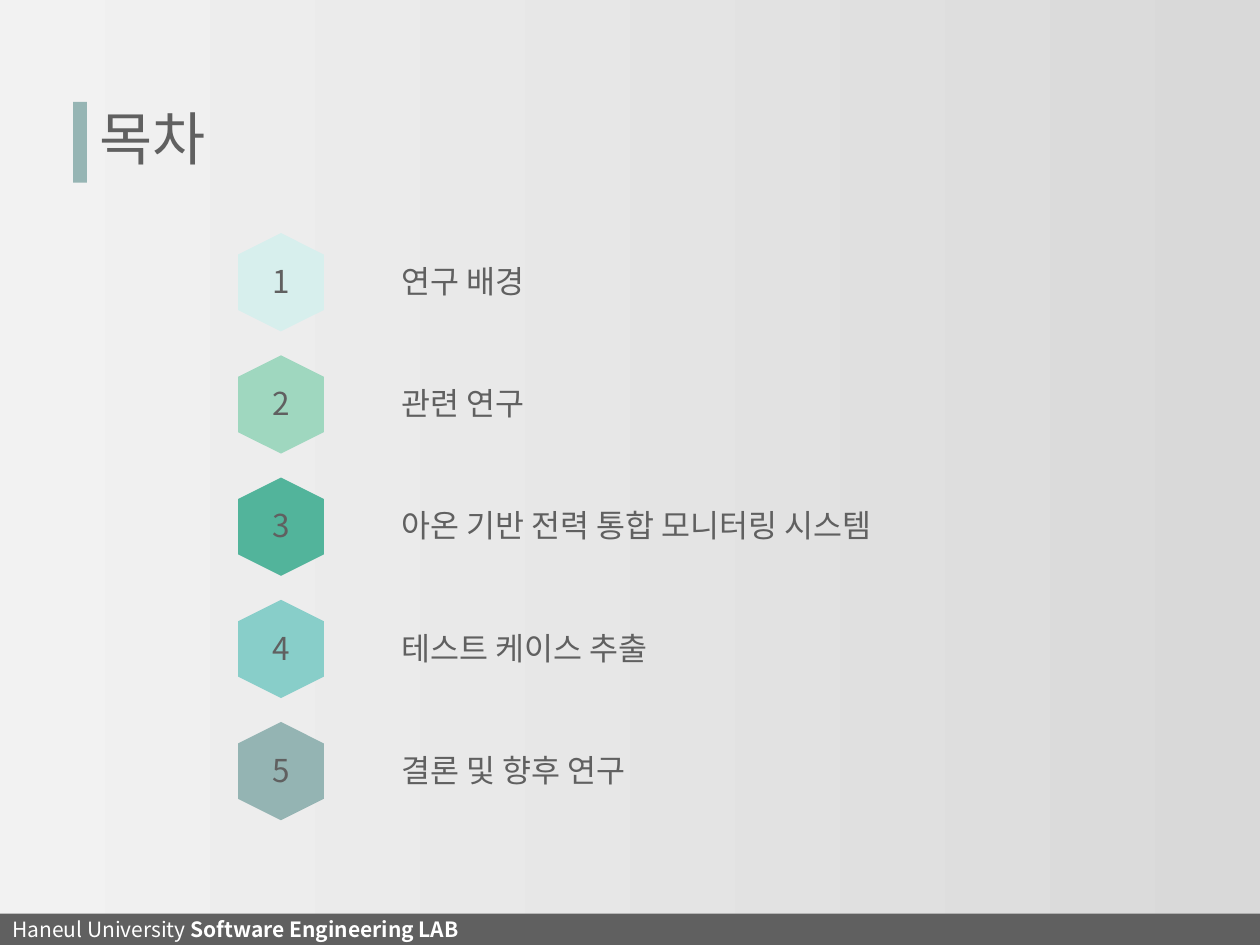
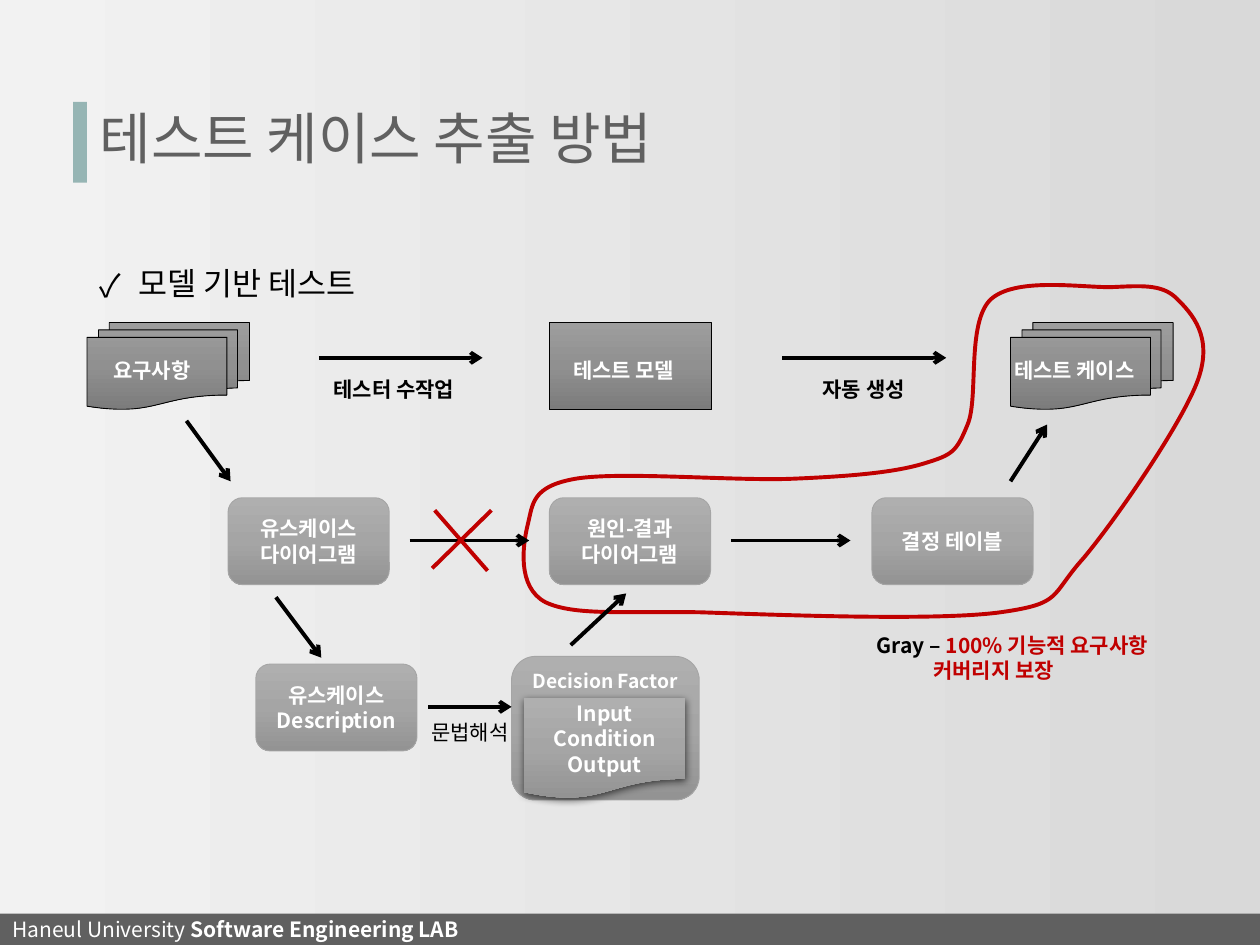
import copy

import pptx
import pptx.dml.color
import pptx.enum.shapes
import pptx.enum.text
import pptx.oxml
import pptx.oxml.ns
import pptx.util
from pptx.util import Inches

SHAPE = pptx.enum.shapes.MSO_SHAPE
ALIGN = pptx.enum.text.PP_ALIGN
ANCHOR = pptx.enum.text.MSO_ANCHOR
AUTO_SIZE = pptx.enum.text.MSO_AUTO_SIZE
qn = pptx.oxml.ns.qn

FONT = "Noto Sans CJK KR"
GRAY, TEAL, RED, BLACK, WHITE = "606060", "96B5B4", "C00000", "000000", "FFFFFF"
BACKDROP = ("F2F2F2", "D9D9D9")
LIGHT_STEEL = ("AFAFAF", "A5A5A5", "939393")
DARK_STEEL = ("9D9D9D", "909090", "7C7C7C")
BOX_SIZE = (1.28, 0.69)

AGENDA = [
    ("연구 배경", "D7EFED"),
    ("관련 연구", "9FD7BF"),
    ("아온 기반 전력 통합 모니터링 시스템", "52B49B"),
    ("테스트 케이스 추출", "88CEC9"),
    ("결론 및 향후 연구", "94B4B3"),
]
COVERAGE_FRAME = (4.16, 2.26, 5.4, 2.64)
COVERAGE_START = (8.81, 2.28)
COVERAGE_CURVES = [
    ((8.56, 2.28), (8.05, 2.2), (7.86, 2.38)),
    ((7.67, 2.57), (7.77, 3.16), (7.68, 3.37)),
    ((7.59, 3.59), (7.56, 3.61), (7.33, 3.68)),
    ((7.1, 3.75), (6.76, 3.78), (6.3, 3.8)),
    ((5.84, 3.82), (4.93, 3.74), (4.57, 3.8)),
    ((4.22, 3.86), (4.23, 4), (4.19, 4.16)),
    ((4.15, 4.32), (4.1, 4.66), (4.33, 4.78)),
    ((4.56, 4.89), (4.96, 4.85), (5.56, 4.86)),
    ((6.16, 4.88), (7.43, 4.93), (7.94, 4.86)),
    ((8.44, 4.79), (8.33, 4.73), (8.6, 4.43)),
    ((8.86, 4.12), (9.39, 3.35), (9.51, 3.01)),
    ((9.63, 2.67), (9.46, 2.49), (9.34, 2.37)),
    ((9.22, 2.25), (9.05, 2.27), COVERAGE_START),
]


def rgb(color):
    return pptx.dml.color.RGBColor.from_string(color)


def apply_format(target, values):
    for name, value in values.items():
        setattr(target, name, value)


def place(shape, left, top, width, height):
    apply_format(shape, {"left": Inches(left), "top": Inches(top),
                         "width": Inches(width), "height": Inches(height)})


def add_xml(parent, tag, **attributes):
    element = pptx.oxml.parse_xml(f"<a:{tag} {pptx.oxml.ns.nsdecls('a')}/>")
    for name, value in attributes.items():
        element.set(name, str(value))
    parent.append(element)
    return element


def add_run(paragraph, text, size, color, bold=False):
    run = paragraph.add_run()
    run.text = text
    apply_format(run.font, {"size": pptx.util.Pt(size), "bold": bold, "name": FONT})
    run.font.color.rgb = rgb(color)
    add_xml(run._r.get_or_add_rPr(), "ea", typeface=FONT)


def write_lines(frame, lines, size, color, bold=False, align=ALIGN.LEFT):
    for index, line in enumerate(lines):
        paragraph = frame.paragraphs[0] if index == 0 else frame.add_paragraph()
        paragraph.alignment = align
        add_run(paragraph, line, size, color, bold)


def indent(paragraph, margin, first=0):
    properties = paragraph._p.get_or_add_pPr()
    properties.set("marL", str(Inches(margin)))
    properties.set("indent", str(Inches(first)))
    return properties


def fill_gradient(shape, colors, angle):
    shape.fill.gradient()
    shape.fill.gradient_angle = angle
    stops = shape._element.spPr.find(".//" + qn("a:gsLst"))
    for _ in colors[2:]:
        stops.insert(1, copy.deepcopy(stops[0]))
    for index, (stop, color) in enumerate(zip(shape.fill.gradient_stops, colors)):
        stop.position = index / (len(colors) - 1)
        stop.color.rgb = rgb(color)


def add_block(slide, kind, left, top, width, height, fill, line=None, angle=270):
    shape = slide.shapes.add_shape(kind, *map(Inches, (left, top, width, height)))
    shape.shadow.inherit = False
    if isinstance(fill, tuple):
        fill_gradient(shape, fill, angle)
    else:
        shape.fill.solid()
        shape.fill.fore_color.rgb = rgb(fill)
    if line:
        shape.line.color.rgb = rgb(line)
        shape.line.width = pptx.util.Pt(0.5)
    else:
        shape.line.fill.background()
    return shape


def add_box(slide, left, top, lines):
    box = add_block(slide, SHAPE.ROUNDED_RECTANGLE, left, top, *BOX_SIZE, LIGHT_STEEL, "A5A5A5")
    box.text_frame.vertical_anchor = ANCHOR.MIDDLE
    write_lines(box.text_frame, lines, 12, WHITE, True, ALIGN.CENTER)


def add_text(slide, left, top, width, height, lines, size=12, color=BLACK,
             bold=False, align=ALIGN.LEFT, wrap=False):
    box = slide.shapes.add_textbox(*map(Inches, (left, top, width, height)))
    apply_format(box.text_frame, {"word_wrap": wrap, "auto_size": AUTO_SIZE.SHAPE_TO_FIT_TEXT})
    write_lines(box.text_frame, lines, size, color, bold, align)
    return box.text_frame


def add_line(slide, start, end, color=BLACK, arrow=True):
    connector = slide.shapes.add_connector(
        pptx.enum.shapes.MSO_CONNECTOR.STRAIGHT, *map(Inches, start + end))
    connector.line.color.rgb = rgb(color)
    connector.line.width = pptx.util.Pt(2.25)
    if arrow:
        add_xml(connector.line._get_or_add_ln(), "tailEnd", type="arrow")
    add_xml(connector._element.spPr, "effectLst")


def add_point(parent, point):
    x, y = (Inches(value - origin) for value, origin in zip(point, COVERAGE_FRAME))
    add_xml(parent, "pt", x=x, y=y)


def add_coverage_outline(slide):
    builder = slide.shapes.build_freeform(*map(Inches, COVERAGE_START))
    builder.add_line_segments([tuple(map(Inches, curve[-1])) for curve in COVERAGE_CURVES])
    outline = builder.convert_to_shape()
    place(outline, *COVERAGE_FRAME)
    route = outline._element.spPr.find(".//" + qn("a:path"))
    route.set("w", str(outline.width))
    route.set("h", str(outline.height))
    for segment in list(route):
        route.remove(segment)
    add_point(add_xml(route, "moveTo"), COVERAGE_START)
    for curve in COVERAGE_CURVES:
        segment = add_xml(route, "cubicBezTo")
        for point in curve:
            add_point(segment, point)
    add_xml(route, "close")
    outline.shadow.inherit = False
    outline.fill.background()
    outline.line.color.rgb = rgb(RED)
    outline.line.width = pptx.util.Pt(2.25)


def add_titled_slide(presentation, title_text, title_size):
    slide = presentation.slides.add_slide(presentation.slide_layouts[5])
    add_block(slide, SHAPE.RECTANGLE, 0, 0, 10, 7.5, BACKDROP, angle=0)
    footer = add_block(slide, SHAPE.RECTANGLE, 0, 7.25, 10, 0.25, GRAY)
    footer.text_frame.vertical_anchor = ANCHOR.MIDDLE
    write_lines(footer.text_frame, ["Haneul University "], 12, WHITE)
    add_run(footer.text_frame.paragraphs[0], "Software Engineering LAB", 12, WHITE, True)
    add_block(slide, SHAPE.RECTANGLE, 0.58, 0.81, 0.11, 0.64, TEAL)
    title = slide.shapes.title
    slide.shapes._spTree.append(title._element)
    place(title, 0.69, 0.4, 8.62, 1.45)
    apply_format(title.text_frame, {"vertical_anchor": ANCHOR.MIDDLE, "word_wrap": True,
                                    "auto_size": AUTO_SIZE.NONE})
    write_lines(title.text_frame, [title_text], title_size, GRAY)
    title.text_frame.paragraphs[0].line_spacing = 0.9
    return slide


def build_agenda(presentation):
    slide = add_titled_slide(presentation, "목차", 33)
    for index, (topic, color) in enumerate(AGENDA):
        top = 1.9 + 0.97 * index
        hexagon = add_block(slide, SHAPE.HEXAGON, 1.84, top, 0.78, 0.68, color)
        hexagon.rotation = 270
        add_text(slide, 1.89, top + 0.13, 0.68, 0.4, [str(index + 1)], 18, GRAY,
                 align=ALIGN.CENTER, wrap=True)
        add_text(slide, 3.09, top + 0.13, 5.05, 0.4, [topic], 18, GRAY, wrap=True)


def add_model_row(slide):
    for kind, left in ((SHAPE.FLOWCHART_MULTIDOCUMENT, 0.69), (SHAPE.FLOWCHART_PROCESS, 4.36),
                       (SHAPE.FLOWCHART_MULTIDOCUMENT, 8.02)):
        add_block(slide, kind, left, 2.56, 1.29, 0.69, DARK_STEEL, BLACK)
    for text, left, top, width, color, align in (
            ("요구사항", 0.8, 2.79, 0.88, WHITE, ALIGN.LEFT),
            ("테스트 모델", 4.45, 2.79, 1.1, WHITE, ALIGN.LEFT),
            ("테스트 케이스", 7.95, 2.79, 1.27, WHITE, ALIGN.LEFT),
            ("테스터 수작업", 2.55, 2.94, 1.27, BLACK, ALIGN.LEFT),
            ("자동 생성", 6.39, 2.94, 0.93, BLACK, ALIGN.CENTER)):
        add_text(slide, left, top, width, 0.3, [text], 12, color, True, align)


def add_decision_factor(slide):
    panel = add_block(slide, SHAPE.ROUNDED_RECTANGLE, 4.06, 5.21, 1.49, 1.14,
                      LIGHT_STEEL, "A5A5A5")
    panel.text_frame.vertical_anchor = ANCHOR.TOP
    write_lines(panel.text_frame, ["Decision Factor"], 11, WHITE, True, ALIGN.CENTER)
    document = add_block(slide, SHAPE.FLOWCHART_DOCUMENT, 4.16, 5.54, 1.28, 0.8, LIGHT_STEEL)
    apply_format(document.text_frame, {"vertical_anchor": ANCHOR.MIDDLE, "word_wrap": True})
    write_lines(document.text_frame, ["Input Condition Output"], 12, WHITE, True, ALIGN.CENTER)
    effects = document._element.spPr.find(qn("a:effectLst"))
    shadow = add_xml(effects, "outerShdw", blurRad=pptx.util.Pt(4.5), dist=pptx.util.Pt(1.5),
                     dir=5400000, algn="ctr", rotWithShape=0)
    add_xml(add_xml(shadow, "srgbClr", val=BLACK), "alpha", val=63000)


def build_method(presentation):
    slide = add_titled_slide(presentation, "테스트 케이스 추출 방법", 32)
    heading = add_text(slide, 0.69, 2.05, 2.46, 0.4, ["모델 기반 테스트"], 18)
    bullet = indent(heading.paragraphs[0], 0.31, -0.31)
    add_xml(bullet, "buFont", typeface=FONT)
    add_xml(bullet, "buChar", char="✓")
    add_model_row(slide)
    add_decision_factor(slide)
    for left, top, lines in (
            (1.81, 3.95, ["유스케이스", "다이어그램"]),
            (4.36, 3.95, ["원인-결과", "다이어그램"]),
            (6.92, 3.95, ["결정 테이블"]),
            (2.03, 5.27, ["유스케이스", "Description"])):
        add_box(slide, left, top, lines)
    add_coverage_outline(slide)
    for start, end in (
            ((2.53, 2.84), (3.83, 2.84)), ((6.21, 2.84), (7.51, 2.84)),
            ((1.48, 3.34), (1.83, 3.82)), ((3.25, 4.29), (4.2, 4.29)),
            ((5.8, 4.29), (6.75, 4.29)), ((8.02, 3.82), (8.31, 3.37)),
            ((3.4, 5.61), (4.06, 5.61)), ((2.19, 4.74), (2.55, 5.22)),
            ((4.53, 5.12), (4.97, 4.71))):
        add_line(slide, start, end)
    for start, end in (((3.45, 4.05), (3.87, 4.53)), ((3.9, 4.05), (3.43, 4.51))):
        add_line(slide, start, end, RED, arrow=False)
    add_text(slide, 3.29, 5.66, 0.88, 0.3, ["문법해석"], align=ALIGN.CENTER)
    coverage = add_text(slide, 6.86, 4.97, 2.53, 0.5, ["Gray – "], bold=True, wrap=True)
    add_run(coverage.paragraphs[0], "100% 기능적 요구사항", 12, RED, True)
    guarantee = coverage.add_paragraph()
    indent(guarantee, 0.45)
    add_run(guarantee, "커버리지 보장", 12, RED, True)


def main():
    presentation = pptx.Presentation()
    apply_format(presentation, {"slide_width": Inches(10), "slide_height": Inches(7.5)})
    build_agenda(presentation)
    build_method(presentation)
    presentation.save("out.pptx")


if __name__ == "__main__":
    main()
